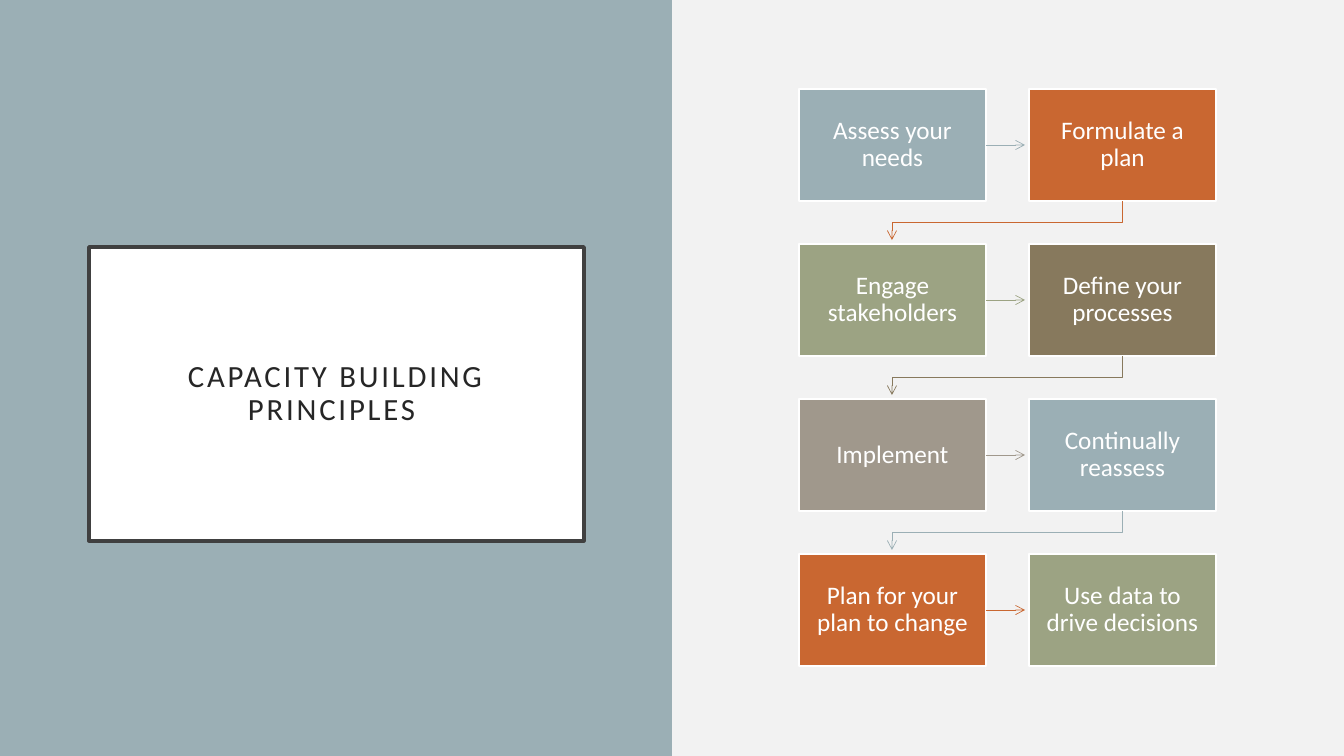
from lxml.etree import SubElement
from pptx import Presentation
from pptx.dml.color import RGBColor
from pptx.enum.shapes import MSO_CONNECTOR, MSO_SHAPE
from pptx.enum.text import MSO_ANCHOR, PP_ALIGN
from pptx.oxml.ns import qn
from pptx.util import Pt

SLIDE_WIDTH, SLIDE_HEIGHT = 1344, 756
EMU_PER_PX = 12192000 / SLIDE_WIDTH

BLUE, ORANGE, GREEN, BROWN, TAUPE = "9BAFB5", "C96731", "9CA383", "87795D", "A0988C"
WHITE = "FFFFFF"

STEPS = [
    ("Assess your needs", BLUE),
    ("Formulate a plan", ORANGE),
    ("Engage stakeholders", GREEN),
    ("Define your processes", BROWN),
    ("Implement", TAUPE),
    ("Continually reassess", BLUE),
    ("Plan for your plan to change", ORANGE),
    ("Use data to drive decisions", GREEN),
]
COLUMNS = 2
STEP_WIDTH, STEP_HEIGHT = 187, 112
STEP_GAP = 43
ARROW_CLEARANCE = 4


def px(length):
    return round(length * EMU_PER_PX)


def color(hex_string):
    return RGBColor.from_string(hex_string)


def add_box(slide, box, fill, line=None, line_width=1):
    shape = slide.shapes.add_shape(MSO_SHAPE.RECTANGLE, *map(px, box))
    shape.shadow.inherit = False
    shape.fill.solid()
    shape.fill.fore_color.rgb = color(fill)
    if line:
        shape.line.color.rgb = color(line)
        shape.line.width = Pt(line_width)
    else:
        shape.line.fill.background()
    return shape


def write_text(shape, text, size, text_color, inset):
    """Centre the text in the shape and return its run."""
    frame = shape.text_frame
    frame.word_wrap = True
    frame.vertical_anchor = MSO_ANCHOR.MIDDLE
    frame.margin_left = frame.margin_right = px(inset)
    frame.margin_top = frame.margin_bottom = px(inset)
    paragraph = frame.paragraphs[0]
    paragraph.alignment = PP_ALIGN.CENTER
    paragraph.line_spacing = 0.9
    run = paragraph.add_run()
    run.text = text
    run.font.name = "Calibri"
    run.font.size = Pt(size)
    run.font.color.rgb = color(text_color)
    return run


def style_arrow(arrow, arrow_color):
    arrow.line.color.rgb = color(arrow_color)
    arrow.line.width = Pt(0.5)
    line = arrow.element.spPr.find(qn("a:ln"))
    SubElement(line, qn("a:tailEnd"), type="arrow")


def add_row_arrow(slide, step, arrow_color):
    """Point from a step to the one on its right."""
    start = step.left + step.width
    middle = step.top + step.height // 2
    end = start + px(STEP_GAP - ARROW_CLEARANCE)
    arrow = slide.shapes.add_connector(
        MSO_CONNECTOR.STRAIGHT, start, middle, end, middle)
    arrow.begin_connect(step, 3)
    style_arrow(arrow, arrow_color)
    SubElement(arrow.element.spPr, qn("a:effectLst"))


def add_return_arrow(slide, start_x, start_y, end_x, arrow_color):
    """Lead from the end of a row to the start of the next."""
    bend_y = start_y + STEP_GAP // 2
    end_y = start_y + STEP_GAP - ARROW_CLEARANCE
    builder = slide.shapes.build_freeform(start_x, start_y, scale=EMU_PER_PX)
    builder.add_line_segments(
        [(start_x, bend_y), (end_x, bend_y), (end_x, end_y)], close=False)
    arrow = builder.convert_to_shape()
    arrow.shadow.inherit = False
    arrow.fill.background()
    style_arrow(arrow, arrow_color)


def add_title_panel(slide, box):
    left, top, width, height = box
    add_box(slide, box, BLUE)
    title = add_box(slide, (left + 89, top + 247, width - 177, height - 462),
                    WHITE, "404040", 2.5)
    write_text(title, "CAPACITY BUILDING PRINCIPLES ", 22, "262626", 20)
    for properties in title.element.iter(qn("a:rPr")):
        properties.set("spc", "200")


def add_process(slide, box):
    left, top, _, _ = box
    first_center = left + STEP_WIDTH / 2
    last_center = first_center + (COLUMNS - 1) * (STEP_WIDTH + STEP_GAP)
    for index, (text, fill) in enumerate(STEPS):
        row, column = divmod(index, COLUMNS)
        x = left + column * (STEP_WIDTH + STEP_GAP)
        y = top + row * (STEP_HEIGHT + STEP_GAP)
        step = add_box(slide, (x, y, STEP_WIDTH, STEP_HEIGHT), fill, WHITE)
        write_text(step, text, 18, WHITE, 14)
        if column < COLUMNS - 1:
            add_row_arrow(slide, step, fill)
        elif index < len(STEPS) - 1:
            add_return_arrow(slide, last_center, y + STEP_HEIGHT, first_center, fill)


def main():
    presentation = Presentation()
    presentation.slide_width = px(SLIDE_WIDTH)
    presentation.slide_height = px(SLIDE_HEIGHT)
    slide = presentation.slides.add_slide(presentation.slide_layouts[6])
    slide.background.fill.solid()
    slide.background.fill.fore_color.rgb = color("F2F2F2")
    add_title_panel(slide, (0, 0, SLIDE_WIDTH // 2, SLIDE_HEIGHT))
    add_process(slide, (799, 89, 417, 577))
    presentation.save("out.pptx")


if __name__ == "__main__":
    main()
